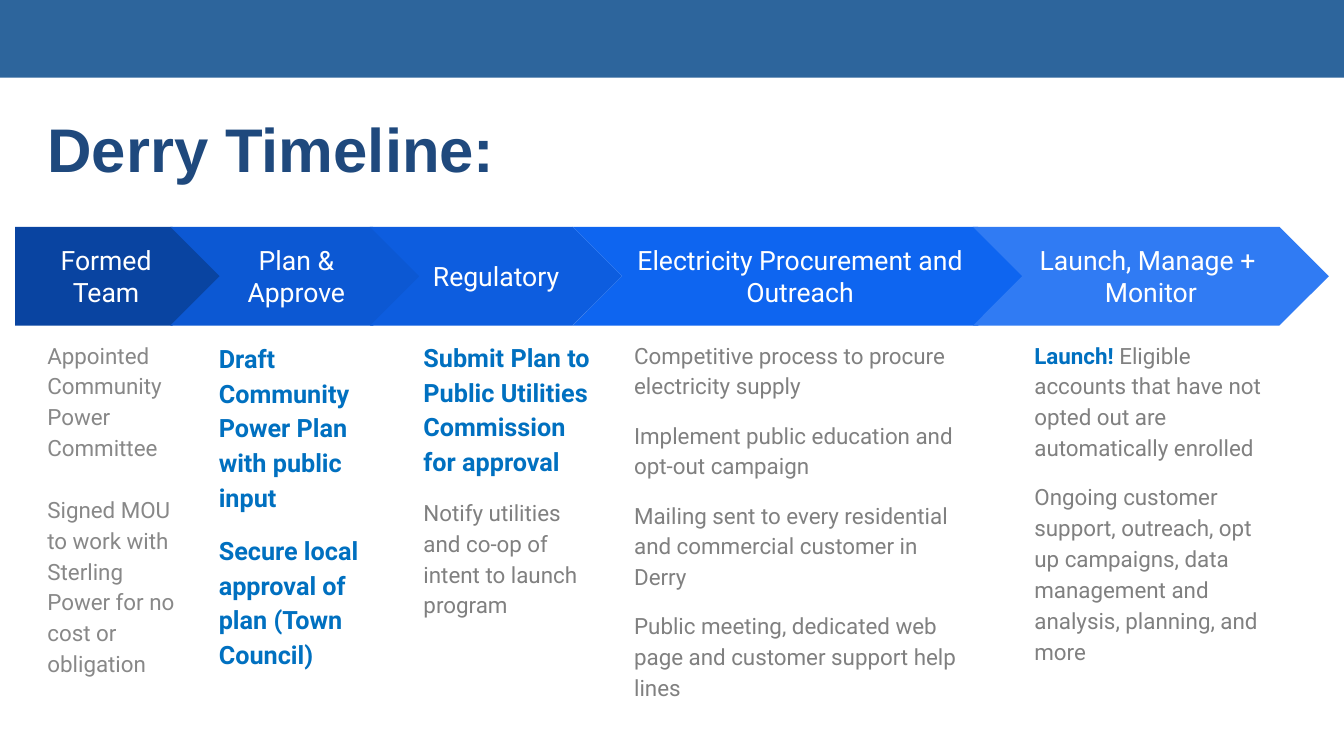
from pptx import Presentation
from pptx.dml.color import RGBColor
from pptx.enum.shapes import MSO_SHAPE
from pptx.enum.text import MSO_ANCHOR, PP_ALIGN
from pptx.util import Pt

RECT, PENTA, CHEV = MSO_SHAPE.RECTANGLE, MSO_SHAPE.PENTAGON, MSO_SHAPE.CHEVRON
TOP, MID, LOW = MSO_ANCHOR.TOP, MSO_ANCHOR.MIDDLE, MSO_ANCHOR.BOTTOM
LEFT, MIDDLE = PP_ALIGN.LEFT, PP_ALIGN.CENTER
EMU = 9144  # one px, 100 px to the inch


def px(n):
    return n * EMU


def color(code):
    return RGBColor.from_string(code)


class Deck:
    head = dict(name="Arial", size=Pt(44), bold=True, color="1F497D")
    step = dict(name="Roboto", size=Pt(19), bold=False, color="FFFFFF")
    pale = dict(name="Roboto", size=Pt(16), bold=False, color="888888")
    body = dict(pale, color="808080")
    key = dict(body, bold=True, color="0070C0")
    big = dict(key, size=Pt(18))

    def __init__(self):
        self.prs = Presentation()
        self.prs.slide_width, self.prs.slide_height = px(1333), px(750)
        self.slide = self.prs.slides.add_slide(self.prs.slide_layouts[6])

    def shape(self, kind, box, fill):
        item = self.slide.shapes.add_shape(kind, *map(px, box))
        item.shadow.inherit = False
        item.fill.solid()
        item.fill.fore_color.rgb = color(fill)
        item.line.fill.background()
        return item

    def arrow(self, kind, box, fill, label):
        item = self.shape(kind, box, fill)
        item.adjustments[0] = 0.5
        self.fit(item.text_frame, [[(label, self.step)]], MID, align=MIDDLE)

    def text(self, box, paras, anchor=TOP, pad=13, **form):
        item = self.slide.shapes.add_textbox(*map(px, box))
        self.fit(item.text_frame, paras, anchor, pad, **form)

    def fit(self, frame, paras, anchor, pad=13, align=LEFT, gap=0, lead=1.0):
        form = dict(word_wrap=True, vertical_anchor=anchor,
                    margin_left=px(13), margin_right=px(13),
                    margin_top=px(pad), margin_bottom=px(pad))
        for name, value in form.items():
            setattr(frame, name, value)
        for i, runs in enumerate(paras):
            para = frame.add_paragraph() if i else frame.paragraphs[0]
            para.alignment, para.line_spacing = align, lead
            if i:
                para.space_before = Pt(gap)
            for words, style in runs:
                self.runs(para, words, style)

    def runs(self, para, words, style):
        for i, line in enumerate(words.split("\n")):
            if i:
                para.add_line_break()
            run = para.add_run()
            run.text = line
            for name, value in style.items():
                if name == "color":
                    run.font.color.rgb = color(value)
                else:
                    setattr(run.font, name, value)


def main():
    deck = Deck()
    pale, body, key, big = deck.pale, deck.body, deck.key, deck.big

    # Top band and title
    deck.shape(RECT, (-2, -1, 1342, 78), "2D659C")
    deck.text((34, 101, 1300, 89), [[("Derry Timeline:", deck.head)]], LOW, 7)

    # Steps: arrow left, width, fill, label; text left, top, width, gap, paragraphs
    steps = [
        (15, 205, "0944A1", "Formed Team", 34, 322, 167, 22, [
            [("Appointed Community Power Committee", pale)],
            [("Signed MOU to work with Sterling Power for no cost or obligation", pale)]]),
        (169, 250, "0C58D3", "Plan & Approve", 204, 323, 191, 13, [
            [("Draft Community Power Plan with public input", big)],
            [("Secure local approval of plan (Town Council)", big)]]),
        (367, 250, "0D5DDF", "Regulatory", 407, 322, 191, 13, [
            [("Submit Plan to Public Utilities Commission for approval", big)],
            [("Notify utilities and co-op of intent to launch program", body)]]),
        (568, 451, "0E65F0", "Electricity Procurement and Outreach", 616, 322, 356, 13, [
            [("Competitive process to procure electricity supply", body)],
            [("Implement public education and opt-out campaign", body)],
            [("Mailing sent to every residential and commercial customer in Derry", body)],
            [("Public meeting, dedicated web page and customer support help lines", body)]]),
        (965, 353, "307BF3", "Launch, Manage + \nMonitor", 1013, 322, 263, 13, [
            [("Launch!", key),
             (" Eligible accounts that have not opted out are automatically enrolled", body)],
            [("Ongoing customer support, outreach, opt up campaigns, data management "
              "and analysis, planning, and more", body)]]),
    ]
    for i, (x, wide, fill, label, left, top, span, gap, paras) in enumerate(steps):
        deck.arrow(CHEV if i else PENTA, (x, 225, wide, 98), fill, label)
        deck.text((left, top, span, 372), paras, gap=gap, lead=1.15)

    deck.prs.save("out.pptx")


if __name__ == "__main__":
    main()
